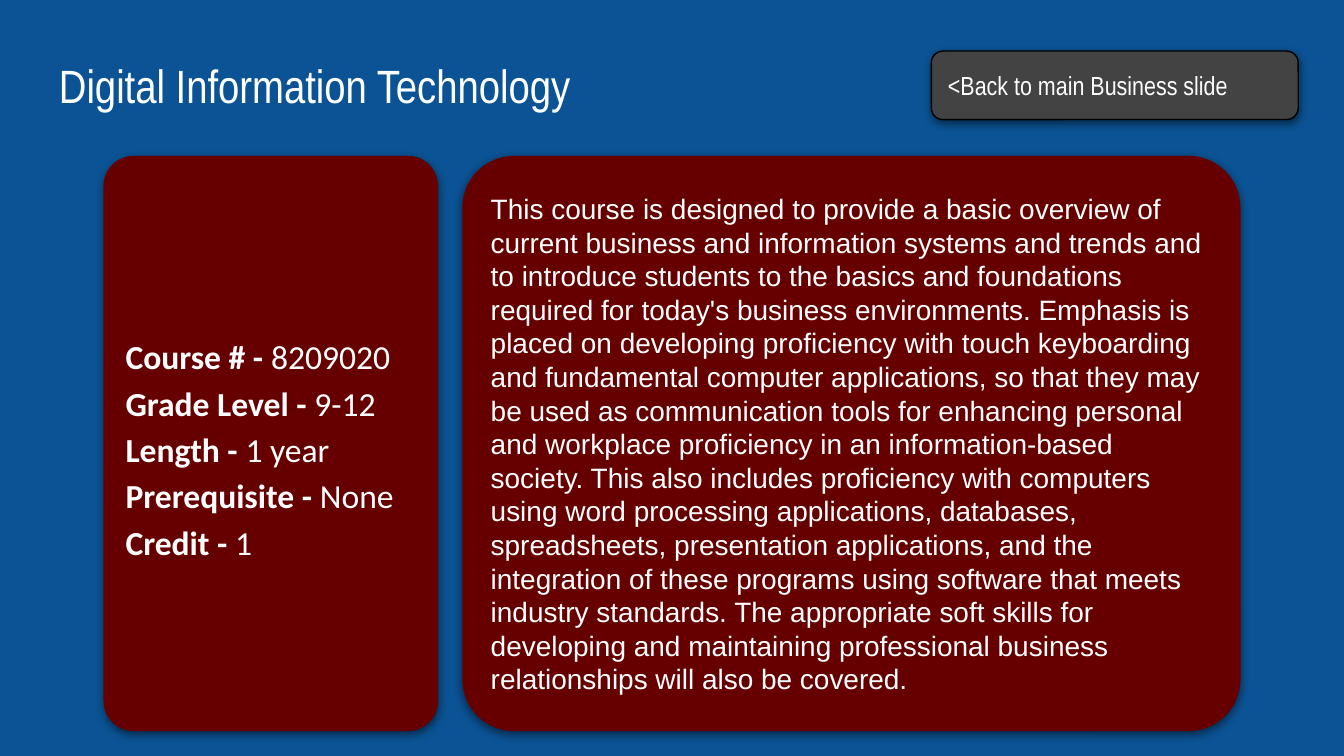
from lxml.etree import SubElement
from pptx import Presentation
from pptx.dml.color import RGBColor
from pptx.enum.shapes import MSO_SHAPE
from pptx.enum.text import MSO_ANCHOR, PP_ALIGN
from pptx.oxml.ns import qn
from pptx.util import Inches, Pt

COLOURS = {"background": "0B5394", "card": "660000", "button": "434343",
           "black": "000000", "text": "FFFFFF"}

deck = Presentation()
deck.slide_width = Inches(10)
deck.slide_height = Inches(10 * 9 / 16)
page = deck.slides.add_slide(deck.slide_layouts[6])
page.background.fill.solid()
page.background.fill.fore_color.rgb = RGBColor.from_string(COLOURS["background"])

# Square grid: 100 columns across the slide
UNIT = deck.slide_width // 100
CARD_TOP, CARD_HEIGHT = 11.6, 42.8


def add_panel(left, top, width, height, fill, corner):
    box = page.shapes.add_shape(MSO_SHAPE.ROUNDED_RECTANGLE, *(
        round(length * UNIT) for length in (left, top, width, height)))
    box.adjustments[0] = corner
    box.fill.solid()
    box.fill.fore_color.rgb = RGBColor.from_string(COLOURS[fill])
    box.line.fill.background()
    # Soft shadow straight below
    box.shadow.inherit = False
    effects = box._element.spPr.find(qn("a:effectLst"))
    shadow = SubElement(effects, qn("a:outerShdw"), blurRad=str(Pt(4.5)),
                        dist=str(Pt(1.5)), dir="5400000", algn="bl",
                        rotWithShape="0")
    tint = SubElement(shadow, qn("a:srgbClr"), val=COLOURS["black"])
    SubElement(tint, qn("a:alpha"), val="50000")
    return box


def write(box, lines, font, size, spacing=1.0):
    frame = box.text_frame
    frame.word_wrap = True
    frame.vertical_anchor = MSO_ANCHOR.MIDDLE
    frame.margin_left = frame.margin_right = UNIT
    frame.margin_top = frame.margin_bottom = UNIT
    for index, line in enumerate(lines):
        para = frame.add_paragraph() if index else frame.paragraphs[0]
        para.alignment = PP_ALIGN.LEFT
        para.line_spacing = spacing
        for text, bold in line:
            span = para.add_run()
            span.text = text
            span.font.name = font
            span.font.size = Pt(size)
            span.font.bold = bold
            span.font.color.rgb = RGBColor.from_string(COLOURS["text"])


# Title
title = page.shapes.add_textbox(*(
    round(length * UNIT) for length in (3.4, 3.2, 93.2, 6.3)))
write(title, [[("Digital Information Technology", False)]], "Arial Narrow", 25)

# Back button
button = add_panel(69.3, 3.8, 27.3, 5.1, "button", 0.17)
button.line.color.rgb = RGBColor.from_string(COLOURS["black"])
button.line.width = Pt(0.75)
write(button, [[("<Back to main Business slide", False)]], "Arial Narrow", 14)

# Course facts
facts = [("Course #", "8209020"), ("Grade Level", "9-12"), ("Length", "1 year"),
         ("Prerequisite", "None"), ("Credit", "1")]
facts_card = add_panel(7.7, CARD_TOP, 24.9, CARD_HEIGHT, "card", 0.09)
write(facts_card, [[(f"{label} - ", True), (value, False)] for label, value in facts],
      "Calibri", 18, spacing=1.15)
facts_card.text_frame.margin_top = round(1.4 * UNIT)

# Course description
description = (
    "This course is designed to provide a basic overview of current business and "
    "information systems and trends and to introduce students to the basics and "
    "foundations required for today's business environments. Emphasis is placed on "
    "developing proficiency with touch keyboarding and fundamental computer "
    "applications, so that they may be used as communication tools for enhancing "
    "personal and workplace proficiency in an information-based society. This also "
    "includes proficiency with computers using word processing applications, "
    "databases, spreadsheets, presentation applications, and the integration of "
    "these programs using software that meets industry standards. The appropriate "
    "soft skills for developing and maintaining professional business relationships "
    "will also be covered.")
description_card = add_panel(34.4, CARD_TOP, 57.9, CARD_HEIGHT, "card", 0.09)
write(description_card, [[(description, False)]], "Arial", 15)

deck.save("out.pptx")
